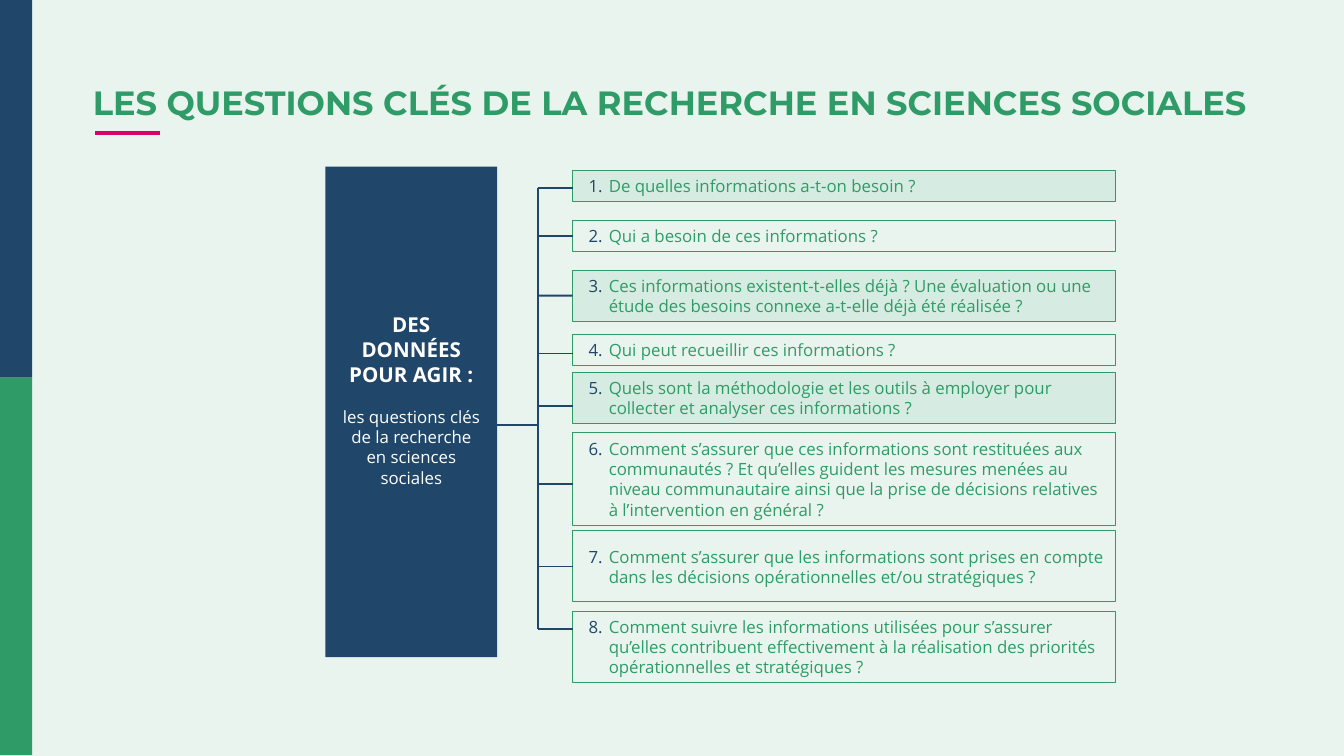
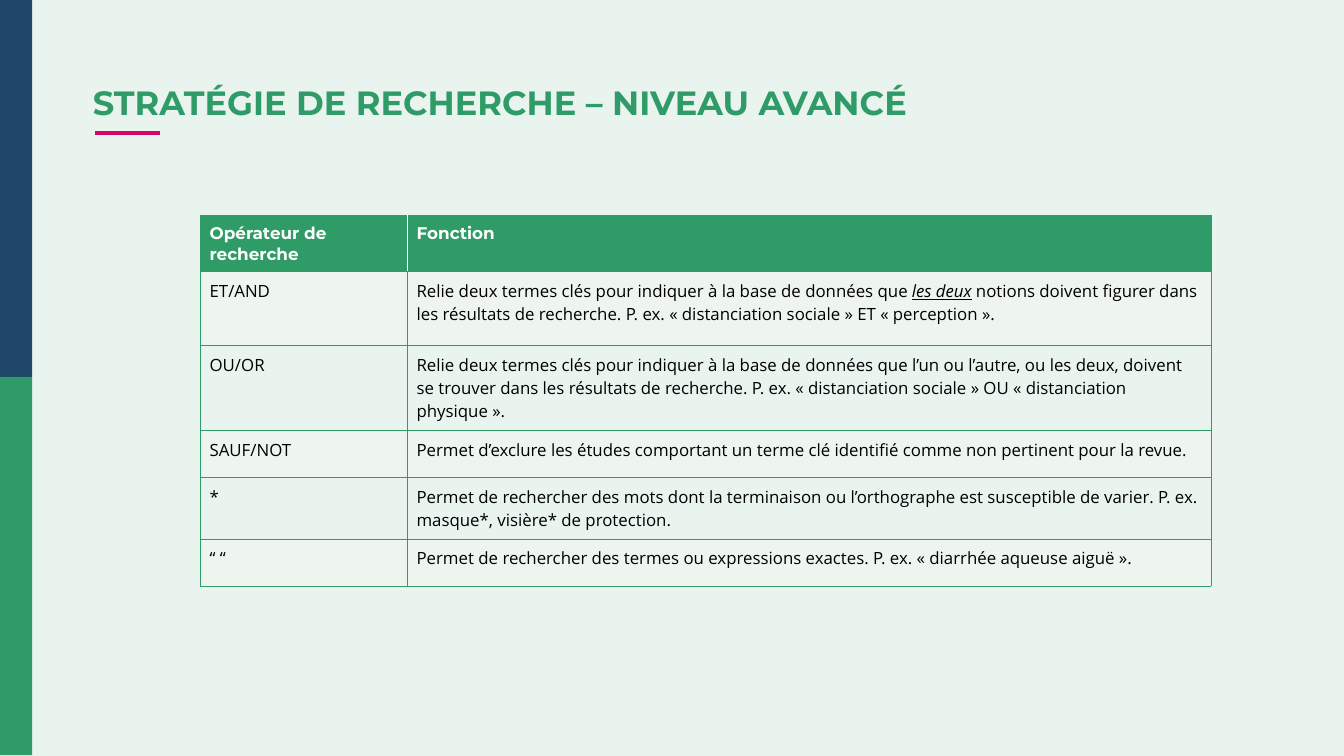
from pptx import Presentation
from pptx.dml.color import RGBColor
from pptx.enum.shapes import MSO_CONNECTOR, MSO_SHAPE
from pptx.enum.text import MSO_ANCHOR, MSO_AUTO_SIZE, PP_ALIGN
from pptx.oxml.ns import qn
from pptx.util import Inches, Pt
from lxml.etree import SubElement

COLORS = {
    "green": "2F9C67",
    "navy": "204669",
    "pink": "D90368",
    "row": "EEF5EF",
    "white": "FFFFFF",
    "black": "000000",
}
TITLE_FONT = "Montserrat"
BODY_FONT = "Open Sans"
TINT = 10
SHADED_QUESTIONS = (1, 3, 5)

QUESTIONS = [
    (0.03, 0.23, 0.16, "De quelles informations a-t-on besoin ?"),
    (0.40, 0.23, 0.52, "Qui a besoin de ces informations ?"),
    (0.77, 0.38, 0.96, "Ces informations existent-t-elles déjà ? Une évaluation ou une "
     "étude des besoins connexe a-t-elle déjà été réalisée ?"),
    (1.25, 0.23, 1.39, "Qui peut recueillir ces informations ?"),
    (1.53, 0.38, 1.78, "Quels sont la méthodologie et les outils à employer pour collecter "
     "et analyser ces informations ?"),
    (1.98, 0.69, 2.36, "Comment s’assurer que ces informations sont restituées aux "
     "communautés ? Et qu’elles guident les mesures menées au niveau communautaire ainsi "
     "que la prise de décisions relatives à l’intervention en général ?"),
    (2.71, 0.53, 2.98, "Comment s’assurer que les informations sont prises en compte dans "
     "les décisions opérationnelles et/ou stratégiques ?"),
    (3.31, 0.53, 3.44, "Comment suivre les informations utilisées pour s’assurer qu’elles "
     "contribuent effectivement à la réalisation des priorités opérationnelles et "
     "stratégiques ?"),
]

COLUMN_WIDTHS = (1.54, 5.98)
ROW_HEIGHTS = (0.42, 0.55, 0.63, 0.35, 0.46, 0.35)
OPERATORS = [
    ("Opérateur de recherche", ["Fonction"]),
    ("ET/AND", ["Relie deux termes clés pour indiquer à la base de données que ", "les deux",
                " notions doivent figurer dans les résultats de recherche. P. ex. "
                "« distanciation sociale » ET « perception »."]),
    ("OU/OR", ["Relie deux termes clés pour indiquer à la base de données que l’un ou l’autre, "
               "ou les deux, doivent se trouver dans les résultats de recherche. P. ex. "
               "« distanciation sociale » OU « distanciation physique »."]),
    ("SAUF/NOT", ["Permet d’exclure les études comportant un terme clé identifié comme non "
                  "pertinent pour la revue."]),
    ("*", ["Permet de rechercher des mots dont la terminaison ou l’orthographe est susceptible "
           "de varier. P. ex. masque*, visière* de protection."]),
    ("“ “", ["Permet de rechercher des termes ou expressions exactes. P. ex. "
             "« diarrhée aqueuse aiguë »."]),
]


def color(name):
    """Return the named palette colour."""
    return RGBColor.from_string(COLORS[name])


def paint(fill, name, alpha=None):
    """Apply a solid colour with an optional opacity in percent."""
    fill.solid()
    fill.fore_color.rgb = color(name)
    if alpha:
        solid_color = fill._xPr.find(qn("a:solidFill"))[0]
        SubElement(solid_color, qn("a:alpha"), val=str(alpha * 1000))


def style_font(paragraph, size, name, color_name, bold=False):
    """Set the font shared by all runs of a paragraph."""
    font = paragraph.font
    font.size, font.name, font.bold = Pt(size), name, bold
    font.color.rgb = color(color_name)


def set_insets(target, left, top, right, bottom):
    """Set the margins of a text frame or table cell."""
    target.margin_left, target.margin_top = Inches(left), Inches(top)
    target.margin_right, target.margin_bottom = Inches(right), Inches(bottom)


def add_box(slide, left, top, width, height, fill=None, line=None, alpha=None):
    """Add a flat rectangle with an optional fill and outline."""
    shape = slide.shapes.add_shape(
        MSO_SHAPE.RECTANGLE, Inches(left), Inches(top), Inches(width), Inches(height))
    shape.shadow.inherit = False
    if fill:
        paint(shape.fill, fill, alpha)
    else:
        shape.fill.background()
    if line:
        shape.line.color.rgb = color(line)
        shape.line.width = Pt(0.5)
    else:
        shape.line.fill.background()
    return shape


def add_line(slide, left, top, right, bottom, color_name, width):
    """Add a straight connector without a shadow."""
    connector = slide.shapes.add_connector(
        MSO_CONNECTOR.STRAIGHT, Inches(left), Inches(top), Inches(right), Inches(bottom))
    connector.line.color.rgb = color(color_name)
    connector.line.width = Pt(width)
    SubElement(connector._element.spPr, qn("a:effectLst"))
    return connector


def add_base_slide(presentation, title, width, height):
    """Add a slide with the background, side bands, title and title rule."""
    slide = presentation.slides.add_slide(presentation.slide_layouts[5])
    paint(slide.background.fill, "green", TINT)
    for index, band in enumerate(("navy", "green")):
        add_box(slide, 0, index * 2.81, 0.24, 2.81, band)
    add_line(slide, 0.71, 0.99, 1.19, 0.99, "pink", 2.25)

    shape = slide.shapes.title
    shape.left, shape.top = Inches(0.69), Inches(0.59)
    shape.width, shape.height = Inches(width), Inches(height)
    frame = shape.text_frame
    frame.text = title
    frame.word_wrap = True
    frame.auto_size = MSO_AUTO_SIZE.SHAPE_TO_FIT_TEXT
    frame.vertical_anchor = MSO_ANCHOR.TOP
    set_insets(frame, 0, 0.05, 0.1, 0.05)
    paragraph = frame.paragraphs[0]
    paragraph.alignment = PP_ALIGN.LEFT
    paragraph.line_spacing = 0.9
    style_font(paragraph, 18, TITLE_FONT, "green", True)
    return slide


def add_hub(slide, left, top, width, height):
    """Add the navy panel that names the topic."""
    frame = add_box(slide, left, top, width, height, "navy").text_frame
    frame.word_wrap = True
    frame.vertical_anchor = MSO_ANCHOR.MIDDLE
    set_insets(frame, 0.12, 0.12, 0.12, 0.3)
    heading, detail = frame.paragraphs[0], frame.add_paragraph()
    heading.text = "DES DONNÉES POUR AGIR :"
    detail.text = "les questions clés de la recherche en sciences sociales"
    detail.space_before = Pt(11)
    for paragraph, size in ((heading, 11), (detail, 9)):
        paragraph.alignment = PP_ALIGN.CENTER
        style_font(paragraph, size, BODY_FONT, "white", size == 11)


def add_question(slide, left, top, width, height, number, text):
    """Add one numbered question box."""
    fill = "green" if number in SHADED_QUESTIONS else None
    shape = add_box(slide, left, top, width, height, fill, "green", TINT)
    frame = shape.text_frame
    frame.word_wrap = True
    frame.vertical_anchor = MSO_ANCHOR.MIDDLE
    set_insets(frame, 0.12, 0.04, 0.04, 0.04)
    paragraph = frame.paragraphs[0]
    paragraph.text = text
    paragraph.alignment = PP_ALIGN.LEFT
    properties = paragraph._p.get_or_add_pPr()
    properties.set("marL", str(Inches(0.15)))
    properties.set("indent", str(-Inches(0.15)))
    bullet_color = SubElement(properties, qn("a:buClr"))
    SubElement(bullet_color, qn("a:srgbClr"), val=COLORS["navy"])
    SubElement(properties, qn("a:buAutoNum"), type="arabicPeriod", startAt=str(number))
    style_font(paragraph, 9, BODY_FONT, "green")
    return shape


def add_question_tree(slide, left, top):
    """Add the hub, its trunk and a branch to each question."""
    hub_width, question_left = 1.28, left + 1.84
    trunk = left + 1.58
    add_hub(slide, left, top, hub_width, 3.65)
    add_line(slide, left + hub_width, top + 1.92, trunk, top + 1.92, "navy", 1)
    add_line(slide, trunk, top + QUESTIONS[0][2], trunk, top + QUESTIONS[-1][2], "navy", 1)
    for number, (offset, height, branch, text) in enumerate(QUESTIONS, 1):
        question = add_question(slide, question_left, top + offset, 4.04, height, number, text)
        middle = offset + height / 2
        centred = abs(middle - branch) < 0.01
        level = top + (middle if centred else branch)
        connector = add_line(slide, trunk, level, question_left, level, "navy", 1)
        if centred:
            connector.end_connect(question, 1)


def set_borders(cell, **overrides):
    """Draw thin green cell borders, with colour overrides by side."""
    properties = cell._tc.get_or_add_tcPr()
    for side in "LRTB":
        line = SubElement(properties, qn(f"a:ln{side}"), w=str(Pt(0.5)))
        fill = SubElement(line, qn("a:solidFill"))
        SubElement(fill, qn("a:srgbClr"), val=COLORS[overrides.get(side, "green")])


def fill_cell(cell, texts, row, column):
    """Write and format one cell; a second text is emphasised."""
    header = row == 0
    set_insets(cell, 0.07, 0.06, 0.07, 0.06)
    set_borders(cell, **({"L" if column else "R": "white"} if header else {}))
    if header or row % 2 or row == len(OPERATORS) - 1:
        paint(cell.fill, "green" if header else "row")
    else:
        cell.fill.background()
    paragraph = cell.text_frame.paragraphs[0]
    for index, text in enumerate(texts):
        run = paragraph.add_run()
        run.text = text
        if index == 1:
            run.font.italic = run.font.underline = True
    if header:
        style_font(paragraph, 9, TITLE_FONT, "white", True)
    else:
        style_font(paragraph, 9, BODY_FONT, "black")


def add_operator_table(slide, left, top):
    """Add the table of search operators."""
    table = slide.shapes.add_table(
        len(OPERATORS), len(COLUMN_WIDTHS), Inches(left), Inches(top),
        Inches(sum(COLUMN_WIDTHS)), Inches(sum(ROW_HEIGHTS))).table
    table.first_row = table.horz_banding = False
    for column, width in zip(table.columns, COLUMN_WIDTHS):
        column.width = Inches(width)
    for row, (operator, function) in enumerate(OPERATORS):
        table.rows[row].height = Inches(ROW_HEIGHTS[row])
        for column, texts in enumerate(([operator], function)):
            fill_cell(table.cell(row, column), texts, row, column)


def main():
    """Build and save the presentation."""
    presentation = Presentation()
    presentation.slide_width = Inches(10)
    presentation.slide_height = Inches(10) * 9 // 16
    slide = add_base_slide(
        presentation, "LES QUESTIONS CLÉS DE LA RECHERCHE EN SCIENCES SOCIALES", 9.15, 0.65)
    add_question_tree(slide, 2.42, 1.24)
    slide = add_base_slide(
        presentation, "STRATÉGIE DE RECHERCHE – NIVEAU AVANCÉ", 8.62, 0.37)
    add_operator_table(slide, 1.49, 1.6)
    presentation.save("out.pptx")


if __name__ == "__main__":
    main()
